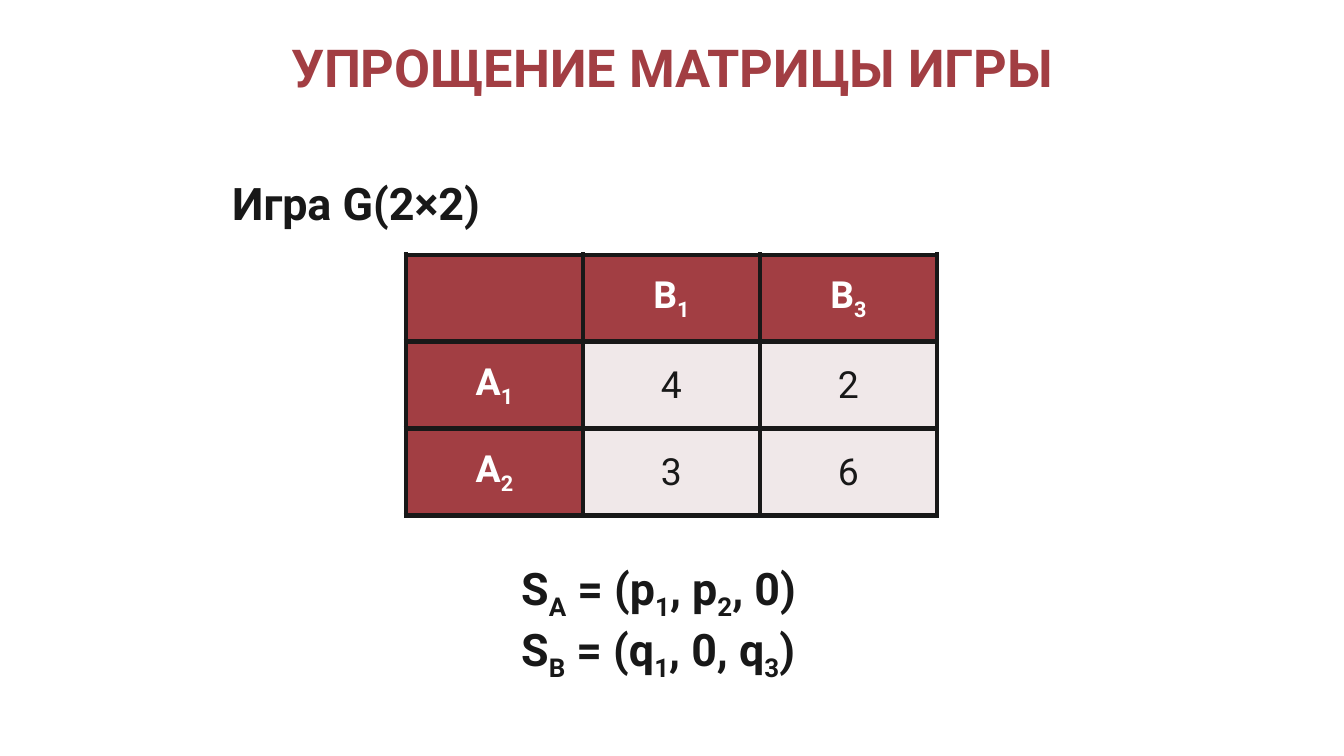
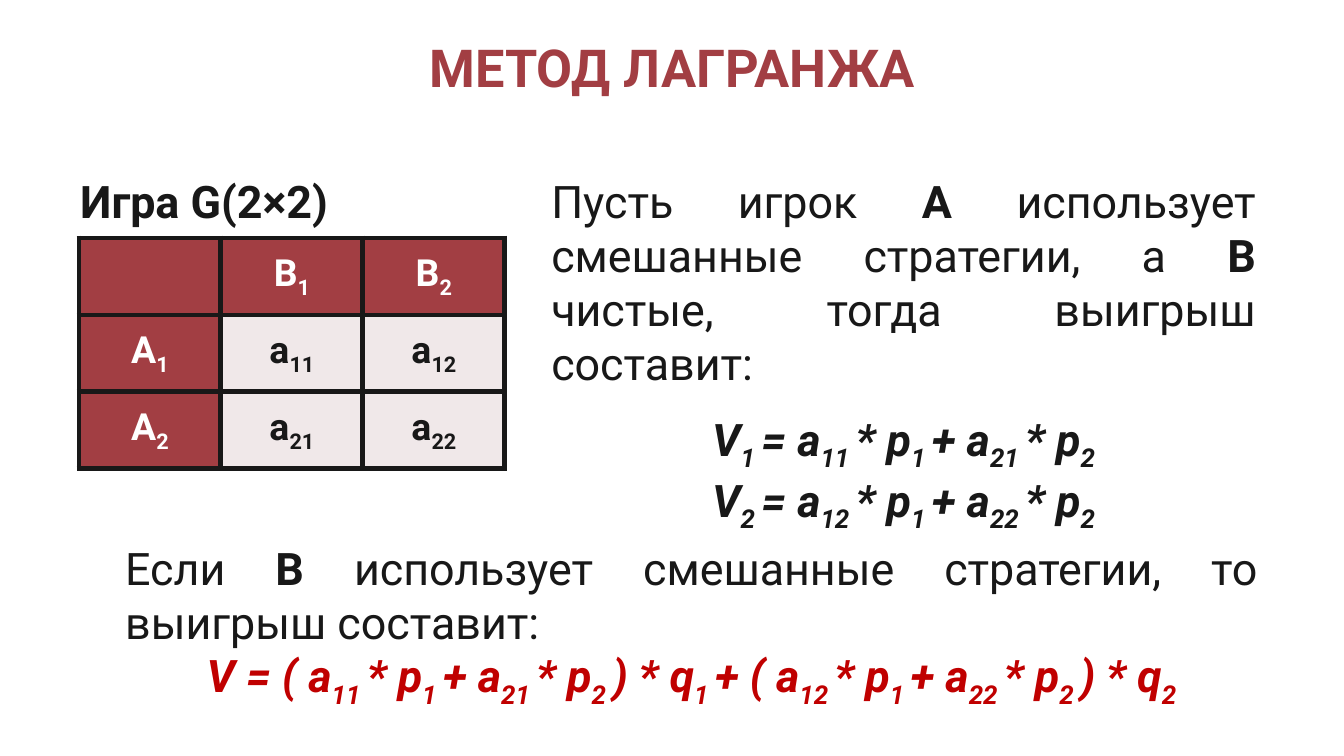
"""Build two slides on simplifying a game matrix and the Lagrange method."""
import dataclasses
from typing import Any

import lxml.etree
import pptx
import pptx.dml.color
import pptx.enum.text
import pptx.oxml.ns
import pptx.util

EMU_PER_PX = 914400 / 134.4
FONT = "Roboto"
RED, DARK, WHITE, PALE, ACCENT = "A23E43", "181818", "FFFFFF", "F0E8E9", "C00000"
ALIGN = pptx.enum.text.PP_ALIGN
ANCHOR = pptx.enum.text.MSO_ANCHOR
AUTO = pptx.enum.text.MSO_AUTO_SIZE


@dataclasses.dataclass(frozen=True)
class Para:
    text: str
    size: int = 24
    color: str = DARK
    bold: bool = True
    italic: bool = False
    align: Any = ALIGN.LEFT
    before: int = 0


@dataclasses.dataclass(frozen=True)
class Box:
    x: int
    y: int
    w: int
    h: int
    paras: tuple[Para, ...]
    anchor: Any = ANCHOR.TOP
    auto: Any = AUTO.SHAPE_TO_FIT_TEXT


@dataclasses.dataclass(frozen=True)
class Matrix:
    x: int
    y: int
    col: int
    row: int
    cells: tuple[tuple[str, ...], ...]
    bold: bool


def px(n: int) -> int:
    return pptx.util.Emu(round(n * EMU_PER_PX))


def rgb(color: str) -> pptx.dml.color.RGBColor:
    return pptx.dml.color.RGBColor.from_string(color)


def apply(target: Any, values: dict[str, Any]) -> None:
    for name, value in values.items():
        setattr(target, name, value)


def write(p: Any, para: Para) -> None:
    """Fill a paragraph: # toggles bold and _ toggles subscript."""
    p.alignment = para.align
    if para.before:
        p.space_before = pptx.util.Pt(para.before)
    for i, part in enumerate(para.text.split("#")):
        for j, text in enumerate(part.split("_")):
            if not text:
                continue
            r = p.add_run()
            r.text = text
            apply(r.font, {"name": FONT, "size": pptx.util.Pt(para.size),
                           "bold": para.bold != bool(i % 2), "italic": para.italic})
            r.font.color.rgb = rgb(para.color)
            if j % 2:
                r._r.get_or_add_rPr().set("baseline", "-25000")


def add_box(s: Any, box: Box) -> None:
    sp = s.shapes.add_textbox(*map(px, (box.x, box.y, box.w, box.h)))
    tf = sp.text_frame
    apply(tf, {"word_wrap": True, "auto_size": box.auto, "vertical_anchor": box.anchor})
    for i, para in enumerate(box.paras):
        write(tf.add_paragraph() if i else tf.paragraphs[0], para)


def add_borders(cell: Any) -> None:
    tc_pr = cell._tc.get_or_add_tcPr()
    qn = pptx.oxml.ns.qn
    for side in "LRTB":
        ln = lxml.etree.SubElement(tc_pr, qn(f"a:ln{side}"), w=str(pptx.util.Pt(3)))
        fill = lxml.etree.SubElement(ln, qn("a:solidFill"))
        lxml.etree.SubElement(fill, qn("a:srgbClr"), val=DARK)


def add_matrix(s: Any, m: Matrix) -> None:
    n_rows, n_cols = len(m.cells), len(m.cells[0])
    sp = s.shapes.add_table(n_rows, n_cols, px(m.x), px(m.y),
                            px(m.col * n_cols), px(m.row * n_rows))
    table = sp.table
    apply(table, {"first_row": False, "horz_banding": False})
    for col in table.columns:
        col.width = px(m.col)
    for i, row in enumerate(m.cells):
        table.rows[i].height = px(m.row)
        for j, text in enumerate(row):
            cell = table.cell(i, j)
            head = i == 0 or j == 0
            apply(cell, {"margin_left": px(10), "margin_right": px(10), "margin_top": 0,
                         "margin_bottom": 0, "vertical_anchor": ANCHOR.MIDDLE})
            add_borders(cell)
            cell.fill.solid()
            cell.fill.fore_color.rgb = rgb(RED if head else PALE)
            write(cell.text_frame.paragraphs[0],
                  Para(text, 20, WHITE if head else DARK, head or m.bold, align=ALIGN.CENTER))


def add_slide(prs: Any, title: str, matrix: Matrix, boxes: tuple[Box, ...]) -> None:
    s = prs.slides.add_slide(prs.slide_layouts[6])
    s.background.fill.solid()
    s.background.fill.fore_color.rgb = rgb(WHITE)
    heading = Para(title, 28, RED, align=ALIGN.CENTER)
    add_box(s, Box(67, 20, 1210, 94, (heading,), ANCHOR.MIDDLE, AUTO.NONE))
    add_matrix(s, matrix)
    for box in boxes:
        add_box(s, box)


def payoff(j: int) -> str:
    """Return the payoff of mixed A against column j, ending inside a subscript."""
    return f"a_1{j} _* p_1 _+ a_2{j} _* p_2"


def formula(text: str, color: str = DARK, before: int = 0) -> Para:
    return Para(text, color=color, italic=True, align=ALIGN.CENTER, before=before)


def prose(text: str) -> Para:
    return Para(text, bold=False, align=ALIGN.JUSTIFY)


def main() -> None:
    prs = pptx.Presentation()
    apply(prs, {"slide_width": px(1344), "slide_height": px(756)})
    game = (Para("Игра G(2×2)"),)
    add_slide(
        prs, "УПРОЩЕНИЕ МАТРИЦЫ ИГРЫ",
        Matrix(406, 255, 177, 87,
               (("", "B_1", "B_3"), ("A_1", "4", "2"), ("A_2", "3", "6")), False),
        (Box(219, 169, 1058, 67, game),
         Box(508, 554, 386, 122, (Para("S_A_ = (p_1_, p_2_, 0)"),
                                  Para("S_B_ = (q_1_, 0, q_3_)")))))
    add_slide(
        prs, "МЕТОД ЛАГРАНЖА",
        Matrix(79, 238, 142, 77,
               (("", "B_1", "B_2"), ("A_1", "a_11", "a_12"), ("A_2", "a_21", "a_22")), True),
        (Box(67, 167, 319, 67, game),
         Box(538, 200, 731, 308,
             (prose("Пусть игрок #А# использует смешанные стратегии, а #В# чистые, "
                    "тогда выигрыш составит:"),
              formula(f"V_1 _= {payoff(1)}", before=12),
              formula(f"V_2 _= {payoff(2)}")), ANCHOR.MIDDLE),
         Box(112, 534, 1159, 176,
             (prose("Если #В# использует смешанные стратегии, то выигрыш составит:"),
              formula(f"V = ( {payoff(1)} _) * q_1 _+ ( {payoff(2)} _) * q_2", ACCENT)))))
    prs.save("out.pptx")


if __name__ == "__main__":
    main()
